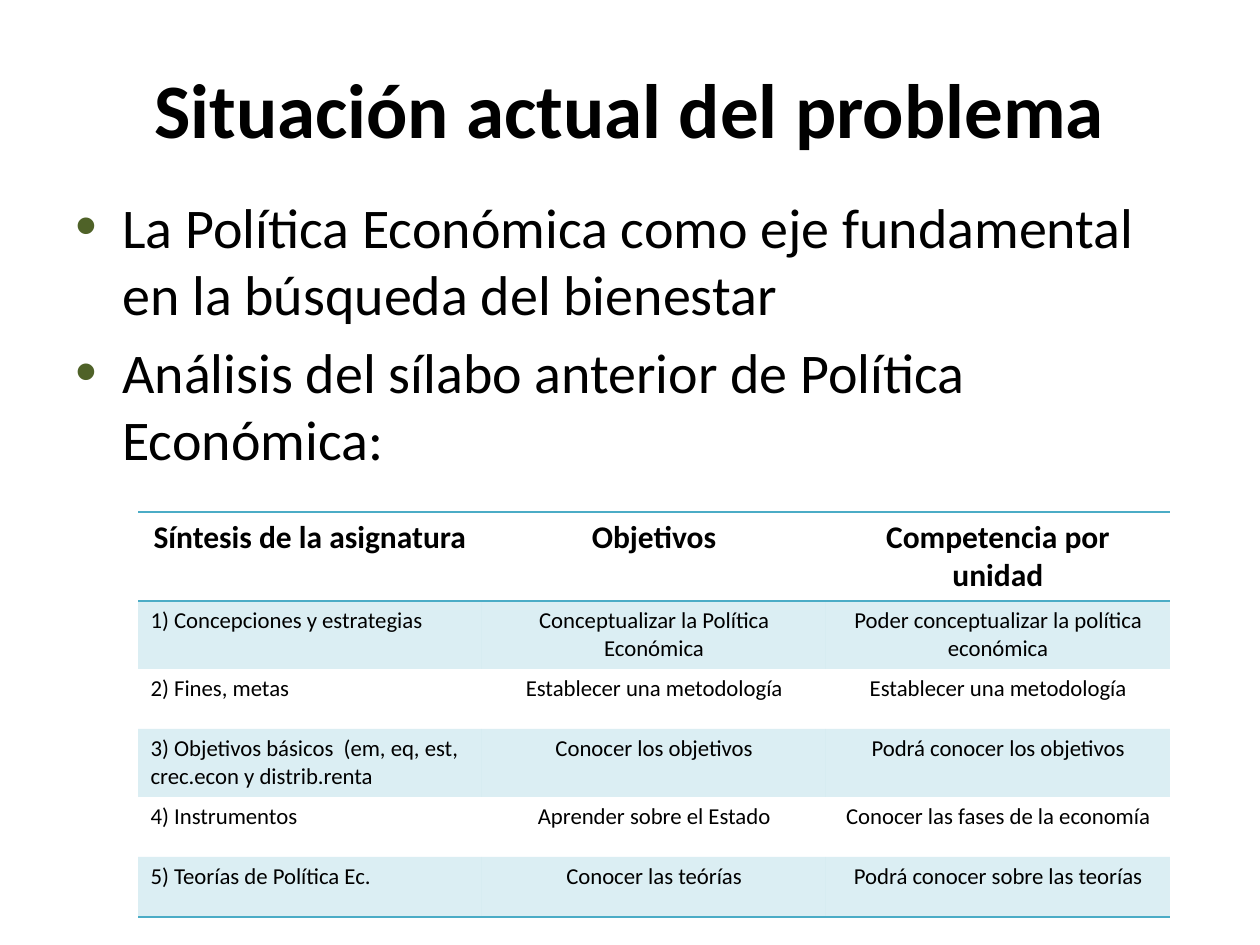
from lxml import etree
from pptx import Presentation, util as u
from pptx.dml.color import RGBColor
from pptx.enum import text
from pptx.oxml import ns

HUES = {"ink": "000000", "teal": "4BACC6", "olive": "4F6228"}
SCALE = 914400 // 126  # EMU per px


def px(n):
    return u.Emu(n * SCALE)


def sub(node, tag, **attrs):
    return etree.SubElement(node, ns.qn(tag), attrs)


class Deck:
    font = "Calibri"

    def __init__(self, wide, high):
        self.prs = Presentation()
        self.prs.slide_width, self.prs.slide_height = px(wide), px(high)
        self.slide = self.prs.slides.add_slide(self.prs.slide_layouts[6])

    def style(self, para, size, bold=False, center=False):
        para.alignment = text.PP_ALIGN.CENTER if center else text.PP_ALIGN.LEFT
        font = para.font
        font.name, font.size, font.bold = self.font, u.Pt(size), bold
        font.color.rgb = RGBColor.from_string(HUES["ink"])

    def box(self, x, y, w, h, anchor):
        frame = self.slide.shapes.add_textbox(px(x), px(y), px(w), px(h)).text_frame
        frame.word_wrap = True
        frame.vertical_anchor = anchor
        return frame

    def title(self, words, *area):
        para = self.box(*area, text.MSO_ANCHOR.MIDDLE).paragraphs[0]
        para.text = words
        self.style(para, 44, bold=True, center=True)

    def bullets(self, items, *area):
        frame = self.box(*area, text.MSO_ANCHOR.TOP)
        for i, words in enumerate(items):
            para = frame.add_paragraph() if i else frame.paragraphs[0]
            para.text = words
            if i:
                para.space_before = u.Pt(6.4)
            props = para._p.get_or_add_pPr()
            props.set("marL", str(px(47)))
            props.set("indent", str(-px(47)))
            sub(sub(props, "a:buClr"), "a:srgbClr", val=HUES["olive"])
            sub(props, "a:buSzPct", val="109000")
            sub(props, "a:buFont", typeface="Arial")
            sub(props, "a:buChar", char="•")
            self.style(para, 32)

    def border(self, cell, sides):
        props = cell._tc.get_or_add_tcPr()
        for side in "LRTB":
            line = sub(props, f"a:ln{side}", w=str(u.Pt(1)))
            if side in sides:
                sub(sub(line, "a:solidFill"), "a:srgbClr", val=HUES["teal"])
            else:
                sub(line, "a:noFill")

    def tint(self, cell, alpha):
        cell.fill.solid()
        cell.fill.fore_color.rgb = RGBColor.from_string(HUES["teal"])
        color = cell._tc.tcPr.find(ns.qn("a:solidFill")).find(ns.qn("a:srgbClr"))
        sub(color, "a:alpha", val=str(alpha * 1000))

    def table(self, rows, x, y, width, heights):
        count = len(rows[0])
        grid = self.slide.shapes.add_table(
            len(rows), count, px(x), px(y), px(width * count), px(sum(heights))).table
        grid.first_row = grid.horz_banding = False
        for col in grid.columns:
            col.width = px(width)
        # Rules above and below the header, and under the last row
        rules = {0: "TB", 1: "T", len(rows) - 1: "B"}
        for r, row in enumerate(rows):
            grid.rows[r].height = px(heights[r])
            for c, words in enumerate(row):
                cell = grid.cell(r, c)
                cell.text = words
                head = r == 0
                self.style(cell.text_frame.paragraphs[0], 18 if head else 13,
                           bold=head, center=head or c > 0)
                self.border(cell, rules.get(r, ""))
                if r % 2:
                    self.tint(cell, 20)
                else:
                    cell.fill.background()


def main():
    deck = Deck(1260, 945)

    # Heading and main points
    deck.title("Situación actual del problema", 63, 38, 1134, 140)
    deck.bullets([
        "La Política Económica como eje fundamental en la búsqueda del bienestar",
        "Análisis del sílabo anterior de Política Económica:",
    ], 63, 186, 1134, 658)

    # Syllabus table
    deck.table([
        ("Síntesis de la asignatura", "Objetivos", "Competencia por unidad"),
        ("1) Concepciones y estrategias", "Conceptualizar la Política Económica",
         "Poder conceptualizar la política económica"),
        ("2) Fines, metas", "Establecer una metodología", "Establecer una metodología"),
        ("3) Objetivos básicos  (em, eq, est, crec.econ y distrib.renta",
         "Conocer los objetivos", "Podrá conocer los objetivos"),
        ("4) Instrumentos", "Aprender sobre el Estado",
         "Conocer las fases de la economía"),
        ("5) Teorías de Política Ec.", "Conocer las teórías",
         "Podrá conocer sobre las teorías"),
    ], 138, 512, 344, [89, 68, 60, 68, 60, 60])

    deck.prs.save("out.pptx")


if __name__ == "__main__":
    main()
